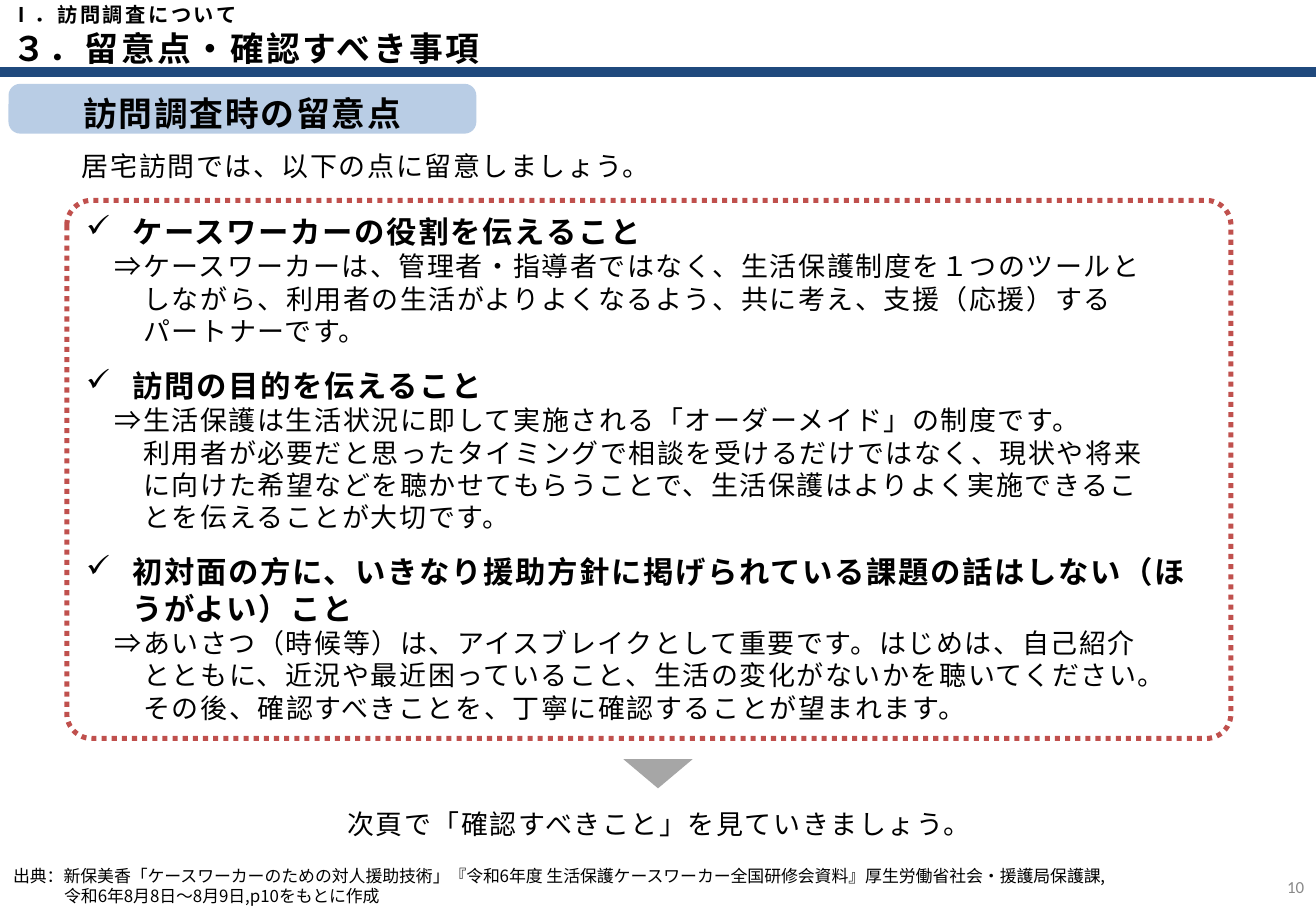
from lxml import etree
from pptx import Presentation
from pptx.dml.color import RGBColor
from pptx.enum import dml, shapes, text
from pptx.oxml import ns
from pptx.util import Inches, Pt

HEAD = "３．留意点・確認すべき事項"
PART = "Ⅰ．訪問調査について"
TOPIC = "訪問調査時の留意点"
LEAD = "居宅訪問では、以下の点に留意しましょう。"
NEXT = "次頁で「確認すべきこと」を見ていきましょう。"
PAGE = "10"
POINTS = [
    ("ケースワーカーの役割を伝えること", [
        "⇒ケースワーカーは、管理者・指導者ではなく、生活保護制度を１つのツールと",
        "しながら、利用者の生活がよりよくなるよう、共に考え、支援（応援）する",
        "パートナーです。"]),
    ("訪問の目的を伝えること", [
        "⇒生活保護は生活状況に即して実施される「オーダーメイド」の制度です。",
        "利用者が必要だと思ったタイミングで相談を受けるだけではなく、現状や将来",
        "に向けた希望などを聴かせてもらうことで、生活保護はよりよく実施できるこ",
        "とを伝えることが大切です。"]),
    ("初対面の方に、いきなり援助方針に掲げられている課題の話はしない（ほうがよい）こと", [
        "⇒あいさつ（時候等）は、アイスブレイクとして重要です。はじめは、自己紹介",
        "とともに、近況や最近困っていること、生活の変化がないかを聴いてください。",
        "その後、確認すべきことを、丁寧に確認することが望まれます。"]),
]
SOURCE = [
    "出典：新保美香「ケースワーカーのための対人援助技術」『令和6年度 生活保護ケースワーカー全国研修会資料』厚生労働省社会・援護局保護課,",
    "令和6年8月8日～8月9日,p10をもとに作成",
]

THEME = {
    "font": "Noto Sans CJK JP", "num": "Calibri",
    "ink": "000000", "navy": "1F497D", "pale": "B9CDE5",
    "red": "C0504D", "gray": "A6A6A6", "dim": "898989",
    "head": 20, "point": 18, "body": 16, "part": 12, "small": 10,
}
LEFT, MID, RIGHT = text.PP_ALIGN.LEFT, text.PP_ALIGN.CENTER, text.PP_ALIGN.RIGHT
TOP, MIDDLE = text.MSO_ANCHOR.TOP, text.MSO_ANCHOR.MIDDLE
LINE = 1.2          # line height per type size
EM = 17 / 72        # one body character with its tracking, in inches


def color(name):
    return RGBColor.from_string(THEME[name])


def frame(shape, anchor=TOP, pad=0.05):
    body = shape.text_frame
    form = {"word_wrap": True, "vertical_anchor": anchor,
            "auto_size": text.MSO_AUTO_SIZE.NONE,
            "margin_left": Inches(0.1), "margin_right": Inches(0.1),
            "margin_top": Inches(pad), "margin_bottom": Inches(pad)}
    for key, val in form.items():
        setattr(body, key, val)
    return body


def write(para, lines, size, bold=False, track=0, align=LEFT, before=0,
          left=0, hang=0, mark=None, font="font", ink="ink"):
    """Fill a paragraph; lines are parted by line breaks, mark is a bullet."""
    form = {"alignment": align, "space_before": Pt(before),
            "line_spacing": Pt(THEME[size] * LINE)}
    for key, val in form.items():
        setattr(para, key, val)
    props = para._p.get_or_add_pPr()
    props.set("marL", str(Inches(left)))
    props.set("indent", str(Inches(-hang)))
    if mark:
        etree.SubElement(props, ns.qn("a:buChar")).set("char", mark)
    for i, line in enumerate(lines):
        if i:
            para.add_line_break()
        run = para.add_run()
        run.text = line
        face = {"size": Pt(THEME[size]), "bold": bold, "name": THEME[font]}
        for key, val in face.items():
            setattr(run.font, key, val)
        run.font.color.rgb = color(ink)
        rpr = run._r.get_or_add_rPr()
        rpr.set("spc", str(int(track * 100)))
        etree.SubElement(rpr, ns.qn("a:ea")).set("typeface", THEME[font])


def label(slide, at, lines, size, anchor=TOP, pad=0.05, **form):
    box = slide.shapes.add_textbox(*map(Inches, at))
    write(frame(box, anchor, pad).paragraphs[0], lines, size, **form)


def block(slide, kind, at, fill=None, adj=None):
    shape = slide.shapes.add_shape(kind, *map(Inches, at))
    shape.shadow.inherit = False
    shape.line.fill.background()
    if fill:
        shape.fill.solid()
        shape.fill.fore_color.rgb = color(fill)
    else:
        shape.fill.background()
    if adj:
        shape.adjustments[0] = adj
    return shape


def main():
    deck = Presentation()
    deck.slide_width, deck.slide_height = Inches(10.83), Inches(7.5)
    slide = deck.slides.add_slide(deck.slide_layouts[5])
    kinds = shapes.MSO_SHAPE

    rule = slide.shapes.add_connector(
        shapes.MSO_CONNECTOR.STRAIGHT, 0, Inches(0.59), Inches(10.83), Inches(0.59))
    rule.line.color.rgb = color("navy")
    rule.line.width = Pt(6)
    etree.SubElement(rule._element.spPr, ns.qn("a:effectLst"))

    title = slide.shapes.title
    place = {"left": 0, "top": 0.2, "width": 9.07, "height": 0.39}
    for key, val in place.items():
        setattr(title, key, Inches(val))
    write(frame(title, MIDDLE).paragraphs[0], [HEAD], "head", bold=True, track=1.5)
    label(slide, (0, 0.01, 9.07, 0.21), [PART], "part", MIDDLE, bold=True, track=1.5)

    pill = block(slide, kinds.ROUNDED_RECTANGLE, (0.07, 0.69, 3.85, 0.41), "pale", 0.234)
    write(frame(pill).paragraphs[0], [TOPIC], "head", bold=True, track=1,
          align=MID, before=12)
    label(slide, (0.34, 1.18, 9.99, 0.37), [LEAD], "body", track=1, left=EM)

    panel = block(slide, kinds.ROUNDED_RECTANGLE, (0.55, 1.65, 9.58, 4.43), adj=0.046)
    panel.line.color.rgb = color("red")
    panel.line.width = Pt(3)
    panel.line.dash_style = dml.MSO_LINE.ROUND_DOT
    body = frame(panel)
    for i, (point, lines) in enumerate(POINTS):
        para = body.add_paragraph() if i else body.paragraphs[0]
        write(para, [point], "point", bold=True, track=1, before=12,
              left=0.38, hang=0.38, mark="✓")
        write(body.add_paragraph(), lines, "body", track=1, left=2 * EM, hang=EM)

    arrow = block(slide, kinds.ISOSCELES_TRIANGLE, (5.13, 6.25, 0.57, 0.24), "gray")
    arrow.rotation = 180
    label(slide, (0.43, 6.6, 9.99, 0.37), [NEXT], "body", track=1, align=MID)
    label(slide, (0.01, 7.1, 10.5, 0.39), SOURCE, "small", MIDDLE, 0,
          left=0.42, hang=0.42)
    label(slide, (10.42, 7.1, 0.41, 0.4), [PAGE], "small", MIDDLE,
          align=RIGHT, font="num", ink="dim")
    deck.save("out.pptx")


if __name__ == "__main__":
    main()
